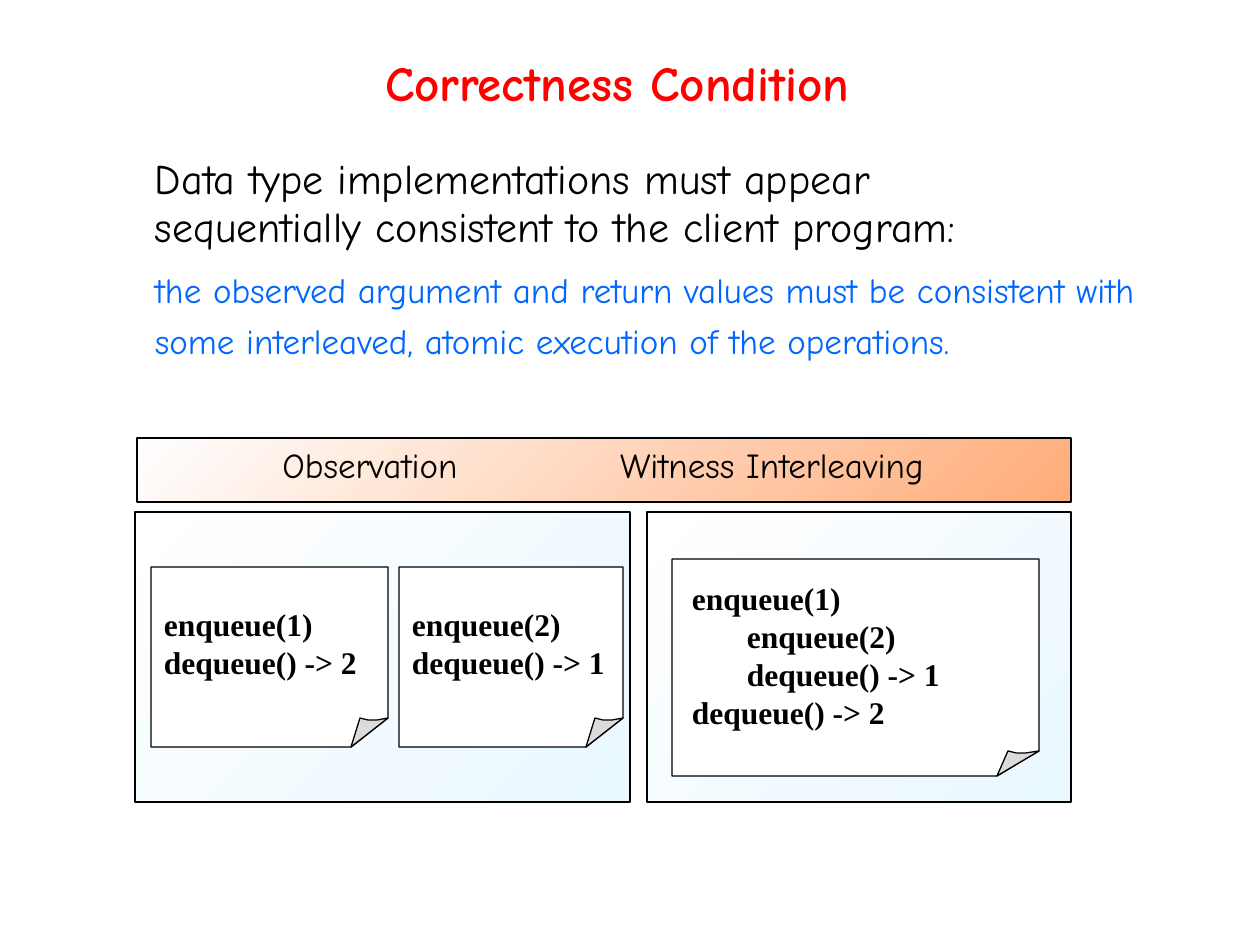
import pptx
import pptx.dml.color
import pptx.enum.shapes
import pptx.enum.text
import pptx.util
from collections import namedtuple

Box = namedtuple("Box", "left top width height")
RGBColor = pptx.dml.color.RGBColor
ANCHOR = pptx.enum.text.MSO_ANCHOR
ALIGN = pptx.enum.text.PP_ALIGN

EMU_PER_PX = 914400 / 126
BLACK = RGBColor(0x00, 0x00, 0x00)
WHITE = RGBColor(0xFF, 0xFF, 0xFF)
RED = RGBColor(0xFF, 0x00, 0x00)
BLUE = RGBColor(0x00, 0x66, 0xFF)
PALE_BLUE = RGBColor(0xE9, 0xF7, 0xFF)
ORANGE = RGBColor(0xFF, 0xAC, 0x79)
GREY = RGBColor(0xDB, 0xDB, 0xDB)
HEADING_FONT = "Comic Neue"
CODE_FONT = "Times New Roman"


def px(length):
    """Turn a length in px into EMU."""
    return pptx.util.Emu(round(length * EMU_PER_PX))


def add_frame(page, box, anchor=ANCHOR.TOP, inset=13):
    """Add an empty wrapping text box and return its text frame."""
    frame = page.shapes.add_textbox(*map(px, box)).text_frame
    frame.word_wrap = True
    frame.vertical_anchor = anchor
    frame.margin_left = frame.margin_right = px(inset)
    frame.margin_top = frame.margin_bottom = px(6)
    return frame


def add_para(frame, text, font, size, color, bold=False, align=ALIGN.LEFT,
             line_height=None, space_before=0, indent=0):
    """Write one paragraph, filling the frame's first one if it is empty."""
    para = frame.paragraphs[0]
    if para.runs:
        para = frame.add_paragraph()
    para.text = text
    para.alignment = align
    para.space_before = px(space_before)
    if line_height:
        para.line_spacing = px(line_height)
    if indent:
        para._p.get_or_add_pPr().set("marL", str(px(indent)))
    para.font.name = font
    para.font.size = pptx.util.Pt(size)
    para.font.bold = bold
    para.font.color.rgb = color


def outline(shape):
    """Give a shape a thin black line and no shadow."""
    shape.shadow.inherit = False
    shape.line.color.rgb = BLACK
    shape.line.width = pptx.util.Pt(0.75)


def add_panel(page, box, color):
    """Add a rectangle shaded from white at top left to a colour."""
    panel = page.shapes.add_shape(
        pptx.enum.shapes.MSO_SHAPE.RECTANGLE, *map(px, box))
    outline(panel)
    panel.fill.gradient()
    panel.fill.gradient_angle = 315
    for stop, shade in zip(panel.fill.gradient_stops, (WHITE, color)):
        stop.color.rgb = shade


def add_polygon(page, points, color):
    """Add a closed outline through points given in px."""
    builder = page.shapes.build_freeform(*points[0], scale=EMU_PER_PX)
    builder.add_line_segments(points[1:], close=True)
    polygon = builder.convert_to_shape()
    outline(polygon)
    polygon.fill.solid()
    polygon.fill.fore_color.rgb = color


def add_note(page, box, fold_width, fold_height, lines, inset=13):
    """Add a sheet with a folded corner and (indent, text) lines of code."""
    left, top, width, height = box
    right, bottom = left + width, top + height
    fold_left, fold_top = right - fold_width, bottom - fold_height
    add_polygon(page, [(left, top), (right, top), (right, fold_top),
                       (fold_left, bottom), (left, bottom)], WHITE)
    curl = [(0.25, 0), (0.45, 0.07), (0.7, 0.07), (1, 0)]
    add_polygon(page, [(fold_left, bottom)] + [
        (round(fold_left + x * fold_width), round(fold_top + y * fold_height))
        for x, y in curl], GREY)
    frame = add_frame(page, Box(left, top, width, height - fold_height),
                      ANCHOR.MIDDLE, inset)
    for indent, text in lines:
        add_para(frame, text, CODE_FONT, 18, BLACK, bold=True,
                 line_height=38, indent=indent)


def add_title(page, box):
    """Add the centred slide title."""
    add_para(add_frame(page, box, ANCHOR.MIDDLE), "Correctness Condition",
             HEADING_FONT, 28, RED, bold=True, align=ALIGN.CENTER)


def add_body(page, box):
    """Add the condition and its explanation."""
    frame = add_frame(page, box)
    add_para(frame, "Data type implementations must appear\v"
             "sequentially consistent to the client program:",
             HEADING_FONT, 24, BLACK, line_height=48)
    add_para(frame, "the observed argument and return values must be "
             "consistent with some interleaved, atomic execution of the "
             "operations.",
             HEADING_FONT, 20, BLUE, line_height=51, space_before=9)


def add_header(page, box):
    """Add the shaded bar with the two column headings."""
    add_panel(page, box, ORANGE)
    for offset, width, text in ((83, 300, "Observation"),
                                (435, 400, "Witness Interleaving")):
        frame = add_frame(
            page, Box(box.left + offset, box.top, width, box.height))
        add_para(frame, text, HEADING_FONT, 20, BLACK, align=ALIGN.CENTER)


def add_observation(page, box):
    """Add the panel with the calls that each client observes."""
    add_panel(page, box, PALE_BLUE)
    for offset, width, sent, received in ((16, 237, 1, 2), (264, 224, 2, 1)):
        add_note(page, Box(box.left + offset, box.top + 55, width, 180),
                 37, 29, [(0, f"enqueue({sent})"),
                          (0, f"dequeue() -> {received}")])


def add_witness(page, box):
    """Add the panel with the interleaved calls."""
    add_panel(page, box, PALE_BLUE)
    add_note(page, Box(box.left + 25, box.top + 47, 367, 217), 42, 25,
             [(0, "enqueue(1)"), (55, "enqueue(2)"),
              (55, "dequeue() -> 1"), (0, "dequeue() -> 2")], inset=20)


def main():
    """Build the slide and save the deck."""
    deck = pptx.Presentation()
    deck.slide_width, deck.slide_height = px(1260), px(945)
    page = deck.slides.add_slide(deck.slide_layouts[6])
    add_title(page, Box(0, 36, 1234, 91))
    add_body(page, Box(142, 149, 1060, 230))
    add_observation(page, Box(135, 512, 495, 290))
    add_witness(page, Box(647, 512, 424, 290))
    add_header(page, Box(137, 438, 934, 64))
    deck.save("out.pptx")


if __name__ == "__main__":
    main()
